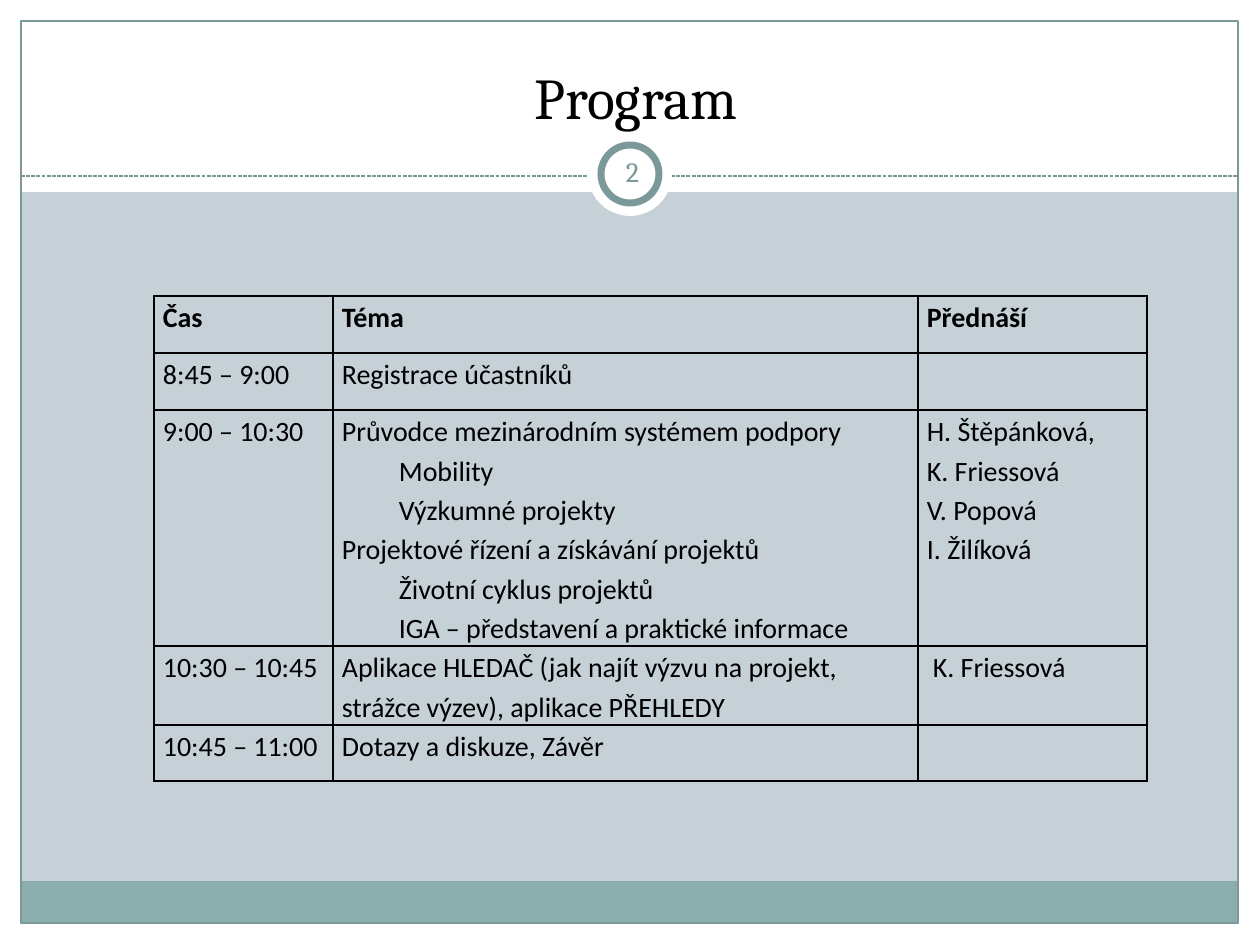
"""Build the seminar programme slide with its timetable."""
import pptx
import pptx.dml.color
import pptx.enum.dml
import pptx.enum.shapes
import pptx.enum.text
import pptx.oxml.ns
import pptx.util
from lxml import etree

COLORS = {"background": "C5D1D7", "white": "FFFFFF", "band": "8CADAE",
          "accent": "7C999A", "black": "000000"}
HEADING_FONT, TABLE_FONT = "Cambria", "Calibri"
TITLE = "Program"
NUMBER = "2"
INDENT, NUDGE = 57, 6
COLUMNS = [179, 585, 229]
ROW_HEIGHTS = [57, 57, 236, 79, 56]
ROWS = [
    [["Čas"], ["Téma"], ["Přednáší"]],
    [["8:45 – 9:00"], ["Registrace účastníků"], []],
    [["9:00 – 10:30"],
     ["Průvodce mezinárodním systémem podpory",
      (INDENT, "Mobility"),
      (INDENT, "Výzkumné projekty"),
      "Projektové řízení a získávání projektů",
      (INDENT, "Životní cyklus projektů"),
      (INDENT, "IGA – představení a praktické informace")],
     ["H. Štěpánková,", "K. Friessová", "V. Popová", "I. Žilíková"]],
    [["10:30 – 10:45"],
     ["Aplikace HLEDAČ (jak najít výzvu na projekt, strážce výzev), aplikace PŘEHLEDY"],
     [(NUDGE, "K. Friessová")]],
    [["10:45 – 11:00"], ["Dotazy a diskuze, Závěr"], []],
]
RECTANGLE = pptx.enum.shapes.MSO_SHAPE.RECTANGLE
OVAL = pptx.enum.shapes.MSO_SHAPE.OVAL
FRAME_SHAPES = [
    (RECTANGLE, (0, 924, 1260, 21), "white", None),
    (RECTANGLE, (0, 0, 1260, 192), "white", None),
    (RECTANGLE, (0, 0, 21, 945), "white", None),
    (RECTANGLE, (1239, 0, 21, 945), "white", None),
    (RECTANGLE, (21, 881, 1217, 43), "band", None),
    (RECTANGLE, (21, 21, 1217, 902), None, 0.75),
]
BADGE_SHAPES = [
    (OVAL, (588, 132, 84, 84), "white", None),
    (OVAL, (601, 145, 58, 58), "white", 4),
]


def px(value):
    return pptx.util.Emu(round(value * 914400 / 126))


def rgb(name):
    return pptx.dml.color.RGBColor.from_string(COLORS[name])


def set_font(paragraph, name, size, color, bold=False):
    font = paragraph.font
    font.name, font.size, font.bold = name, pptx.util.Pt(size), bold
    font.color.rgb = rgb(color)


def add_shapes(slide, items):
    for kind, box, fill, line_width in items:
        shape = slide.shapes.add_shape(kind, *map(px, box))
        shape.shadow.inherit = False
        if fill:
            shape.fill.solid()
            shape.fill.fore_color.rgb = rgb(fill)
        else:
            shape.fill.background()
        if line_width:
            shape.line.color.rgb = rgb("accent")
            shape.line.width = pptx.util.Pt(line_width)
        else:
            shape.line.fill.background()


def add_divider(slide):
    divider = slide.shapes.add_connector(
        pptx.enum.shapes.MSO_CONNECTOR.STRAIGHT, px(21), px(176), px(1239), px(176))
    divider.line.color.rgb = rgb("accent")
    divider.line.width = pptx.util.Pt(0.75)
    divider.line.dash_style = pptx.enum.dml.MSO_LINE.SQUARE_DOT
    properties = divider._element.spPr
    etree.SubElement(properties, pptx.oxml.ns.qn("a:effectLst"))


def add_heading(shape, box, text, size, color, anchor):
    shape.left, shape.top, shape.width, shape.height = map(px, box)
    frame = shape.text_frame
    frame.text, frame.word_wrap, frame.vertical_anchor = text, True, anchor
    frame.auto_size = pptx.enum.text.MSO_AUTO_SIZE.NONE
    frame.margin_left = frame.margin_right = px(6)
    frame.margin_top = frame.margin_bottom = px(6)
    paragraph = frame.paragraphs[0]
    paragraph.alignment = pptx.enum.text.PP_ALIGN.CENTER
    set_font(paragraph, HEADING_FONT, size, color)
    return frame


def add_borders(cell):
    properties = cell._tc.get_or_add_tcPr()
    for index, side in enumerate(("lnL", "lnR", "lnT", "lnB")):
        border = etree.Element(pptx.oxml.ns.qn(f"a:{side}"), w=str(pptx.util.Pt(1)))
        fill = etree.SubElement(border, pptx.oxml.ns.qn("a:solidFill"))
        etree.SubElement(fill, pptx.oxml.ns.qn("a:srgbClr"), val=COLORS["black"])
        properties.insert(index, border)


def fill_cell(cell, lines, bold):
    cell.fill.background()
    add_borders(cell)
    cell.margin_left = cell.margin_right = px(9)
    cell.margin_top = cell.margin_bottom = 0
    frame = cell.text_frame
    for index, line in enumerate(lines):
        indent, text = line if isinstance(line, tuple) else (0, line)
        paragraph = frame.add_paragraph() if index else frame.paragraphs[0]
        paragraph.text = text
        paragraph.line_spacing = 1.15
        paragraph._p.get_or_add_pPr().set("marL", str(px(indent)))
        set_font(paragraph, TABLE_FONT, 16, "black", bold)


def add_timetable(slide):
    box = (154, 296, sum(COLUMNS), sum(ROW_HEIGHTS))
    table = slide.shapes.add_table(len(ROWS), len(COLUMNS), *map(px, box)).table
    table.first_row = table.horz_banding = False
    for column, width in zip(table.columns, COLUMNS):
        column.width = px(width)
    for row_index, (row, height) in enumerate(zip(ROWS, ROW_HEIGHTS)):
        table.rows[row_index].height = px(height)
        for column_index, lines in enumerate(row):
            fill_cell(table.cell(row_index, column_index), lines, row_index == 0)


def main():
    presentation = pptx.Presentation()
    presentation.slide_width, presentation.slide_height = px(1260), px(945)
    slide = presentation.slides.add_slide(presentation.slide_layouts[5])
    slide.background.fill.solid()
    slide.background.fill.fore_color.rgb = rgb("background")
    add_shapes(slide, FRAME_SHAPES)
    add_divider(slide)
    add_shapes(slide, BADGE_SHAPES)
    title = slide.shapes.title
    slide.shapes._spTree.append(title._element)
    frame = add_heading(title, (42, 32, 1176, 105), TITLE, 33, "black",
                        pptx.enum.text.MSO_ANCHOR.BOTTOM)
    frame.margin_left = px(18)
    add_timetable(slide)
    number_box = (601, 141, 63, 60)
    number = slide.shapes.add_textbox(*map(px, number_box))
    add_heading(number, number_box, NUMBER, 16, "accent",
                pptx.enum.text.MSO_ANCHOR.MIDDLE)
    presentation.save("out.pptx")


if __name__ == "__main__":
    main()
